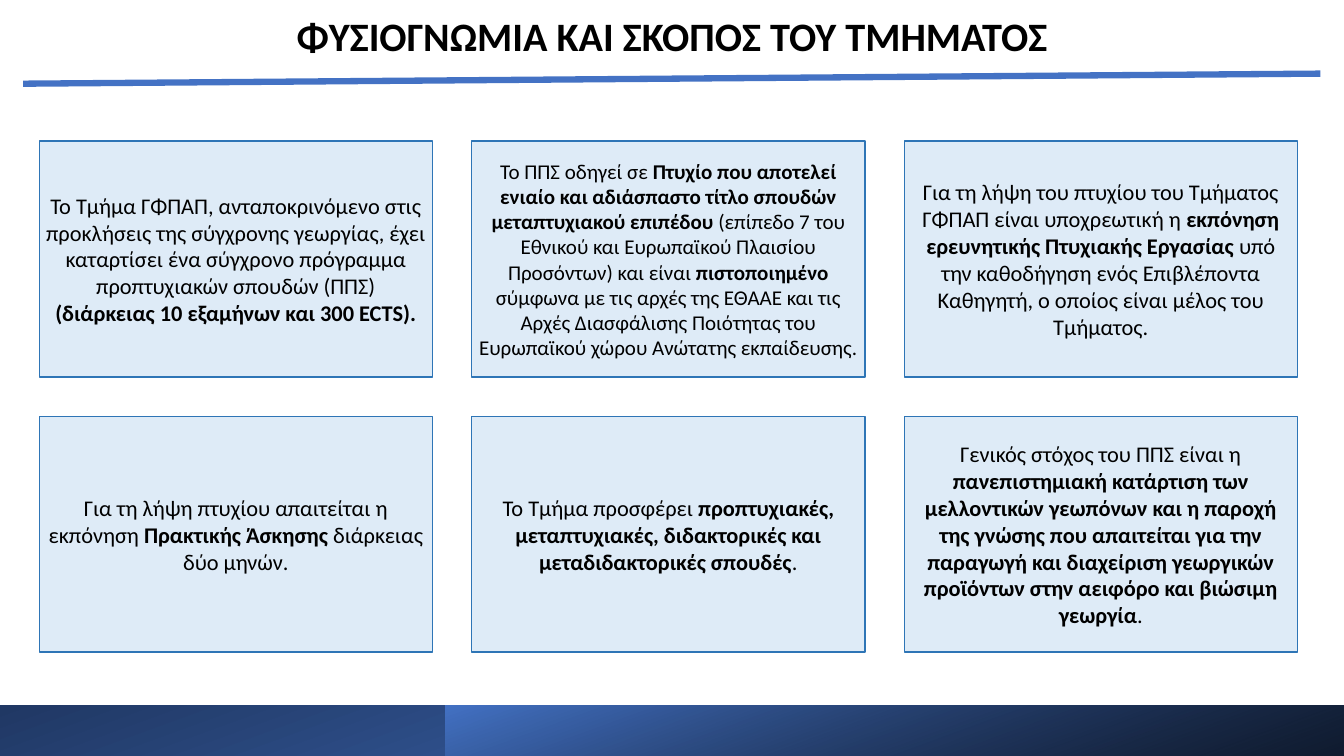
from dataclasses import dataclass
from itertools import product

from lxml.etree import SubElement
from pptx import Presentation
from pptx.dml.color import RGBColor
from pptx.enum.shapes import MSO_CONNECTOR, MSO_SHAPE
from pptx.enum.text import MSO_ANCHOR, PP_ALIGN
from pptx.oxml.ns import qn
from pptx.util import Pt


@dataclass(frozen=True)
class Theme:
    """Colours and type sizes of the slide."""
    font: str = "Calibri"
    ink: RGBColor = RGBColor(0x00, 0x00, 0x00)
    accent: RGBColor = RGBColor(0x44, 0x72, 0xC4)
    navy: RGBColor = RGBColor(0x20, 0x38, 0x64)
    card_fill: RGBColor = RGBColor(0xDE, 0xEB, 0xF7)
    card_line: RGBColor = RGBColor(0x2E, 0x75, 0xB6)
    title_size: float = 28.8
    card_size: float = 16
    dense_size: float = 15


@dataclass(frozen=True)
class Box:
    """A rectangle in points."""
    left: float
    top: float
    width: float
    height: float

    def lengths(self):
        """Return the position and size as slide lengths."""
        return Pt(self.left), Pt(self.top), Pt(self.width), Pt(self.height)


THEME = Theme()
PAGE = Box(0, 0, 960, 540)
TITLE = "ΦΥΣΙΟΓΝΩΜΙΑ ΚΑΙ ΣΚΟΠΟΣ ΤΟΥ ΤΜΗΜΑΤΟΣ"
CARDS = [
    (THEME.card_size, [
        ("Το Τμήμα ΓΦΠΑΠ, ανταποκρινόμενο στις προκλήσεις της σύγχρονης γεωργίας, "
         "έχει καταρτίσει ένα σύγχρονο πρόγραμμα προπτυχιακών σπουδών (ΠΠΣ) ", False),
        ("(διάρκειας 10 εξαμήνων και 300 ECTS).", True)]),
    (THEME.dense_size, [
        ("Το ΠΠΣ οδηγεί σε ", False),
        ("Πτυχίο που αποτελεί ενιαίο και αδιάσπαστο τίτλο σπουδών "
         "μεταπτυχιακού επιπέδου ", True),
        ("(επίπεδο 7 του Εθνικού και Ευρωπαϊκού Πλαισίου Προσόντων) και είναι ", False),
        ("πιστοποιημένο", True),
        (" σύμφωνα με τις αρχές της ΕΘΑΑΕ και τις Αρχές Διασφάλισης Ποιότητας του "
         "Ευρωπαϊκού χώρου Ανώτατης εκπαίδευσης.", False)]),
    (THEME.card_size, [
        ("Για τη λήψη του πτυχίου του Τμήματος ΓΦΠΑΠ είναι υποχρεωτική η ", False),
        ("εκπόνηση ερευνητικής Πτυχιακής Εργασίας", True),
        (" υπό την καθοδήγηση ενός Επιβλέποντα Καθηγητή, ο οποίος είναι μέλος "
         "του Τμήματος.", False)]),
    (THEME.card_size, [
        ("Για τη λήψη πτυχίου απαιτείται η εκπόνηση ", False),
        ("Πρακτικής Άσκησης ", True),
        ("διάρκειας δύο μηνών.", False)]),
    (THEME.card_size, [
        ("Το Τμήμα προσφέρει ", False),
        ("προπτυχιακές, μεταπτυχιακές, διδακτορικές και μεταδιδακτορικές σπουδές", True),
        (".", False)]),
    (THEME.card_size, [
        ("Γενικός στόχος του ΠΠΣ είναι η ", False),
        ("πανεπιστημιακή κατάρτιση των μελλοντικών γεωπόνων και η παροχή της γνώσης "
         "που απαιτείται για την παραγωγή και διαχείριση γεωργικών προϊόντων στην "
         "αειφόρο και βιώσιμη γεωργία", True),
        (".", False)]),
]


def write_spans(para, spans, size):
    """Add centred runs of text, each with its own weight."""
    para.alignment = PP_ALIGN.CENTER
    for text, bold in spans:
        span = para.add_run()
        span.text = text
        span.font.name = THEME.font
        span.font.size = Pt(size)
        span.font.bold = bold
        span.font.color.rgb = THEME.ink


def add_title(page, box):
    """Place the heading and the sloping rule below it."""
    heading = page.shapes.add_textbox(*Box(box.left + 11.5, box.top, 904.3, 36).lengths())
    frame = heading.text_frame
    frame.word_wrap = True
    frame.vertical_anchor = MSO_ANCHOR.BOTTOM
    para = frame.paragraphs[0]
    para.line_spacing = 0.8
    write_spans(para, [(TITLE, True)], THEME.title_size)
    bottom = box.top + box.height
    rule = page.shapes.add_connector(
        MSO_CONNECTOR.STRAIGHT, Pt(box.left), Pt(bottom),
        Pt(box.left + box.width), Pt(bottom - 7.2))
    rule.line.color.rgb = THEME.accent
    rule.line.width = Pt(4.5)
    SubElement(rule._element.spPr, qn("a:effectLst"))


def add_card(page, box, size, spans):
    """Place one outlined card with centred text."""
    card = page.shapes.add_shape(MSO_SHAPE.RECTANGLE, *box.lengths())
    card.shadow.inherit = False
    card.fill.solid()
    card.fill.fore_color.rgb = THEME.card_fill
    card.line.color.rgb = THEME.card_line
    card.line.width = Pt(1)
    frame = card.text_frame
    frame.word_wrap = True
    frame.vertical_anchor = MSO_ANCHOR.MIDDLE
    inset = Pt(size * 0.3)
    frame.margin_left = frame.margin_right = inset
    frame.margin_top = frame.margin_bottom = inset
    write_spans(frame.paragraphs[0], spans, size)


def add_card_grid(page, box, columns=3, rows=2, gap=28.1):
    """Divide the box into equal cards, row by row."""
    width = (box.width - gap * (columns - 1)) / columns
    height = (box.height - gap * (rows - 1)) / rows
    for (row, column), (size, spans) in zip(product(range(rows), range(columns)), CARDS):
        cell = Box(box.left + column * (width + gap),
                   box.top + row * (height + gap), width, height)
        add_card(page, cell, size, spans)


def add_band(page, box, colors, angle, rotation=0):
    """Place a mirrored gradient band and return its gradient stops."""
    band = page.shapes.add_shape(MSO_SHAPE.RECTANGLE, *box.lengths())
    band.shadow.inherit = False
    band.line.fill.background()
    band.rotation = rotation
    band._element.spPr.get_or_add_xfrm().set("flipH", "1")
    band.fill.gradient()
    band.fill.gradient_angle = angle
    stops = band.fill.gradient_stops
    for stop, color in zip(stops, colors):
        stop.color.rgb = color
    return band


def add_footer(page, box):
    """Place the full-width band and the darker band over its right part."""
    add_band(page, box, (THEME.accent, THEME.navy), 250, rotation=180)
    start = 318
    right = Box(box.left + start, box.top, box.width - start, box.height)
    band = add_band(page, right, (THEME.ink, THEME.accent), 70)
    black = next(band._element.spPr.iter(qn("a:srgbClr")))
    SubElement(black, qn("a:alpha")).set("val", "76000")


def main():
    """Build the deck and save it."""
    deck = Presentation()
    deck.slide_width, deck.slide_height = Pt(PAGE.width), Pt(PAGE.height)
    page = deck.slides.add_slide(deck.slide_layouts[6])
    add_card_grid(page, Box(28.1, 100.8, 898.6, 365.1))
    add_footer(page, Box(0, 503.8, PAGE.width, 36.2))
    add_title(page, Box(16.6, 10.1, 926.6, 49.7))
    deck.save("out.pptx")


if __name__ == "__main__":
    main()
